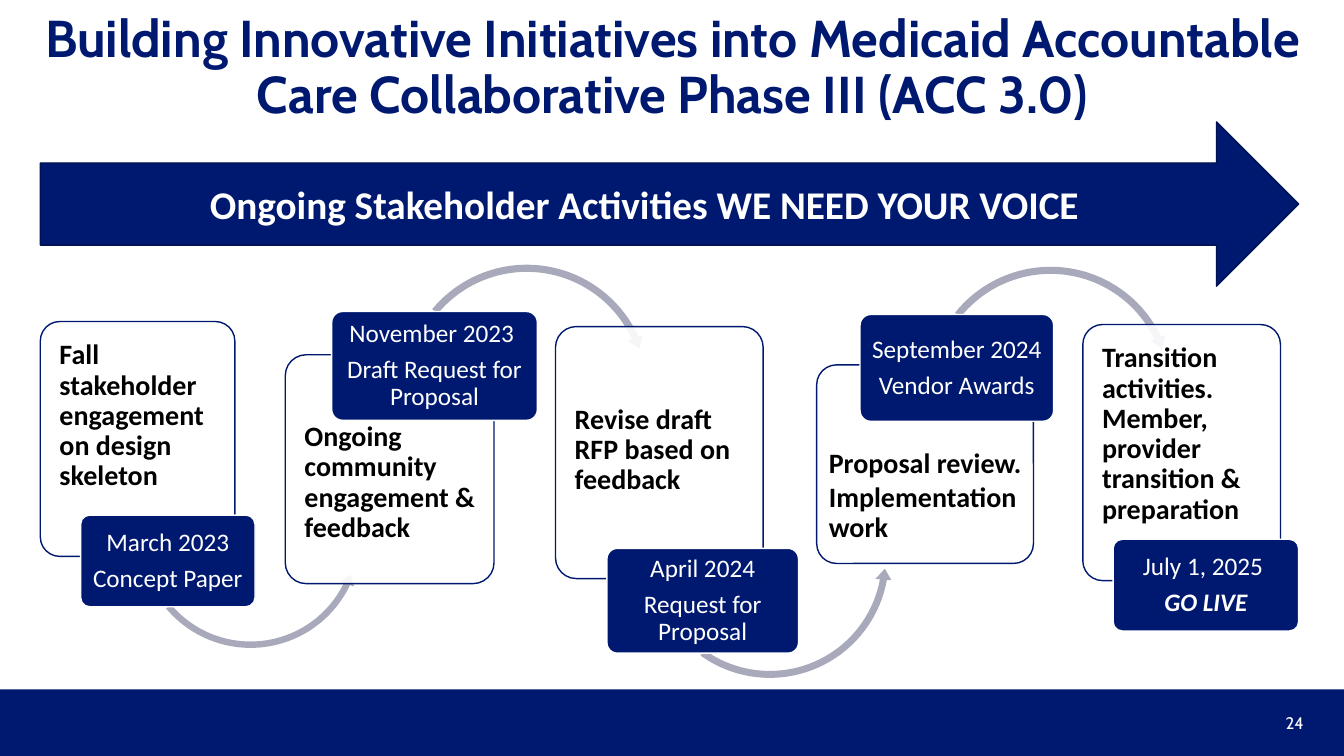
from dataclasses import dataclass
from typing import Optional

from lxml.etree import SubElement
from pptx import Presentation
from pptx.dml.color import RGBColor
from pptx.enum.shapes import MSO_SHAPE
from pptx.enum.text import MSO_ANCHOR, MSO_AUTO_SIZE, PP_ALIGN
from pptx.oxml.ns import qn
from pptx.util import Inches, Pt

COLORS = {
    "navy": "001970",
    "edge": "001251",
    "arc": "A8A9BA",
    "white": "FFFFFF",
    "black": "000000",
}

Box = tuple[float, float, float, float]


@dataclass
class Arc:
    """Round arrow in a square box; angles in degrees, clockwise."""
    left: float
    top: float
    size: float
    start: float
    neck: float


@dataclass
class Step:
    card: Box
    note: Box
    task: list[str]
    tag: Box
    date: str
    label: str
    arc: Optional[Arc] = None
    final: bool = False


STEPS = [
    Step((0.4, 3.19, 1.93, 2.33), (0.45, 3.24, 1.84, 1.46),
         ["Fall stakeholder engagement on design skeleton"],
         (0.8, 5.11, 1.73, 0.91), "March 2023", "Concept Paper",
         Arc(1.35, 4.2, 2.27, 140, 25.6)),
    Step((2.83, 3.52, 2.07, 2.27), (2.88, 4.05, 2, 1.68),
         ["Ongoing community engagement & feedback"],
         (3.29, 3.09, 2.04, 1.08), "November 2023 ",
         "Draft Request for Proposal",
         Arc(3.96, 2.58, 2.53, 219.7, 335.5)),
    Step((5.51, 3.24, 2.06, 2.5), (5.56, 3.88, 1.95, 1.27),
         ["Revise draft RFP based on feedback"],
         (6.02, 5.44, 1.9, 1.04), "April 2024", "Request for Proposal",
         Arc(6.41, 4.32, 2.45, 125.6, 10.3)),
    Step((8.1, 3.62, 2.15, 1.97), (8.08, 4.32, 2.45, 1.19),
         ["Proposal review.", "Implementation work"],
         (8.53, 3.12, 1.92, 1.06), "September 2024", "Vendor Awards",
         Arc(9.16, 2.6, 2.52, 218.7, 334.5)),
    Step((10.74, 3.22, 1.96, 2.54), (10.79, 3.27, 2.15, 1.88),
         ["Transition activities. Member, provider transition & preparation"],
         (11.04, 5.35, 1.84, 0.91), "July 1, 2025 ", "GO LIVE", final=True),
]


def write(shape, lines: list[str], *, size: float, color: str = "white",
          font: str = "Calibri", bold: bool = False, align=PP_ALIGN.CENTER,
          anchor=MSO_ANCHOR.MIDDLE, pad: tuple[float, float] = (0.1, 0.05),
          line: float = 1.0, gap: float = 0) -> None:
    frame = shape.text_frame
    frame.auto_size = MSO_AUTO_SIZE.NONE
    frame.word_wrap = True
    frame.vertical_anchor = anchor
    frame.margin_left = frame.margin_right = Inches(pad[0])
    frame.margin_top = frame.margin_bottom = Inches(pad[1])
    for i, text in enumerate(lines):
        para = frame.add_paragraph() if i else frame.paragraphs[0]
        para.alignment = align
        para.line_spacing = line
        para.space_before = Pt(gap if i else 0)
        run = para.add_run()
        run.text = text
        run.font.name = font
        run.font.size = Pt(size)
        run.font.bold = bold
        run.font.color.rgb = RGBColor.from_string(COLORS[color])


def add_form(slide, kind, box: Box, fill: str, edge: Optional[str] = None):
    shape = slide.shapes.add_shape(kind, *map(Inches, box))
    shape.shadow.inherit = False
    shape.fill.solid()
    shape.fill.fore_color.rgb = RGBColor.from_string(COLORS[fill])
    if edge:
        shape.line.color.rgb = RGBColor.from_string(COLORS[edge])
        shape.line.width = Pt(1)
    else:
        shape.line.fill.background()
    if kind == MSO_SHAPE.ROUNDED_RECTANGLE:
        shape.adjustments[0] = 0.1
    return shape


def add_text(slide, box: Box, lines: list[str], **style):
    shape = slide.shapes.add_textbox(*map(Inches, box))
    write(shape, lines, **style)
    return shape


def add_arc(slide, arc: Arc) -> None:
    right = arc.neck > arc.start
    kind = (MSO_SHAPE.CIRCULAR_ARROW if right
            else MSO_SHAPE.LEFT_CIRCULAR_ARROW)
    shape = add_form(slide, kind, (arc.left, arc.top, arc.size, arc.size),
                     "arc")
    # Band width, head angle, neck, start, head width; 0.6 per degree
    head = 5.4 if right else -5.4
    values = (0.028, head * 0.6, arc.neck * 0.6, arc.start * 0.6, 0.0325)
    for i, value in enumerate(values):
        shape.adjustments[i] = value


def add_step(slide, step: Step) -> None:
    # Card, slightly see-through so the arrow tip fades behind it
    card = add_form(slide, MSO_SHAPE.ROUNDED_RECTANGLE, step.card,
                    "white", "navy")
    tint = card._element.spPr.find(qn("a:solidFill"))[0]
    SubElement(tint, qn("a:alpha")).set("val", "90000")
    add_text(slide, step.note, step.task, size=20, color="black", bold=True,
             align=PP_ALIGN.LEFT, anchor=MSO_ANCHOR.TOP, pad=(0.14, 0.14),
             line=0.9, gap=2.4)
    # Arrow to the next card
    if step.arc:
        add_arc(slide, step.arc)
    # Date tag
    tag = add_form(slide, MSO_SHAPE.ROUNDED_RECTANGLE, step.tag,
                   "navy", "white")
    write(tag, [step.date, step.label], size=18, pad=(0.06, 0.05),
          line=0.9, gap=6.3)
    if step.final:
        font = tag.text_frame.paragraphs[1].runs[0].font
        font.bold = font.italic = True


def main() -> None:
    deck = Presentation()
    deck.slide_width, deck.slide_height = Inches(13.33), Inches(7.5)
    slide = deck.slides.add_slide(deck.slide_layouts[5])

    # Footer band and title
    add_form(slide, MSO_SHAPE.RECTANGLE, (0, 6.84, 13.33, 0.66), "navy")
    title = slide.shapes.title
    title.left, title.top, title.width, title.height = map(
        Inches, (0.16, 0.16, 13.02, 1.05))
    write(title, ["Building Innovative Initiatives into Medicaid Accountable "
                  "Care Collaborative Phase III (ACC 3.0)"],
          size=37, color="navy", font="Cabin", bold=True, line=0.9)

    # Timeline
    for step in STEPS:
        add_step(slide, step)

    # Banner arrow
    add_form(slide, MSO_SHAPE.RIGHT_ARROW, (0.4, 1.21, 12.48, 1.63),
             "navy", "edge")
    add_text(slide, (0.46, 1.74, 11.86, 0.57),
             ["Ongoing Stakeholder Activities WE NEED YOUR VOICE"],
             size=28, bold=True, anchor=MSO_ANCHOR.TOP)

    # Page number
    add_text(slide, (10.03, 6.97, 3, 0.4), ["24"], size=12, font="Cabin",
             align=PP_ALIGN.RIGHT)
    deck.save("out.pptx")


if __name__ == "__main__":
    main()
